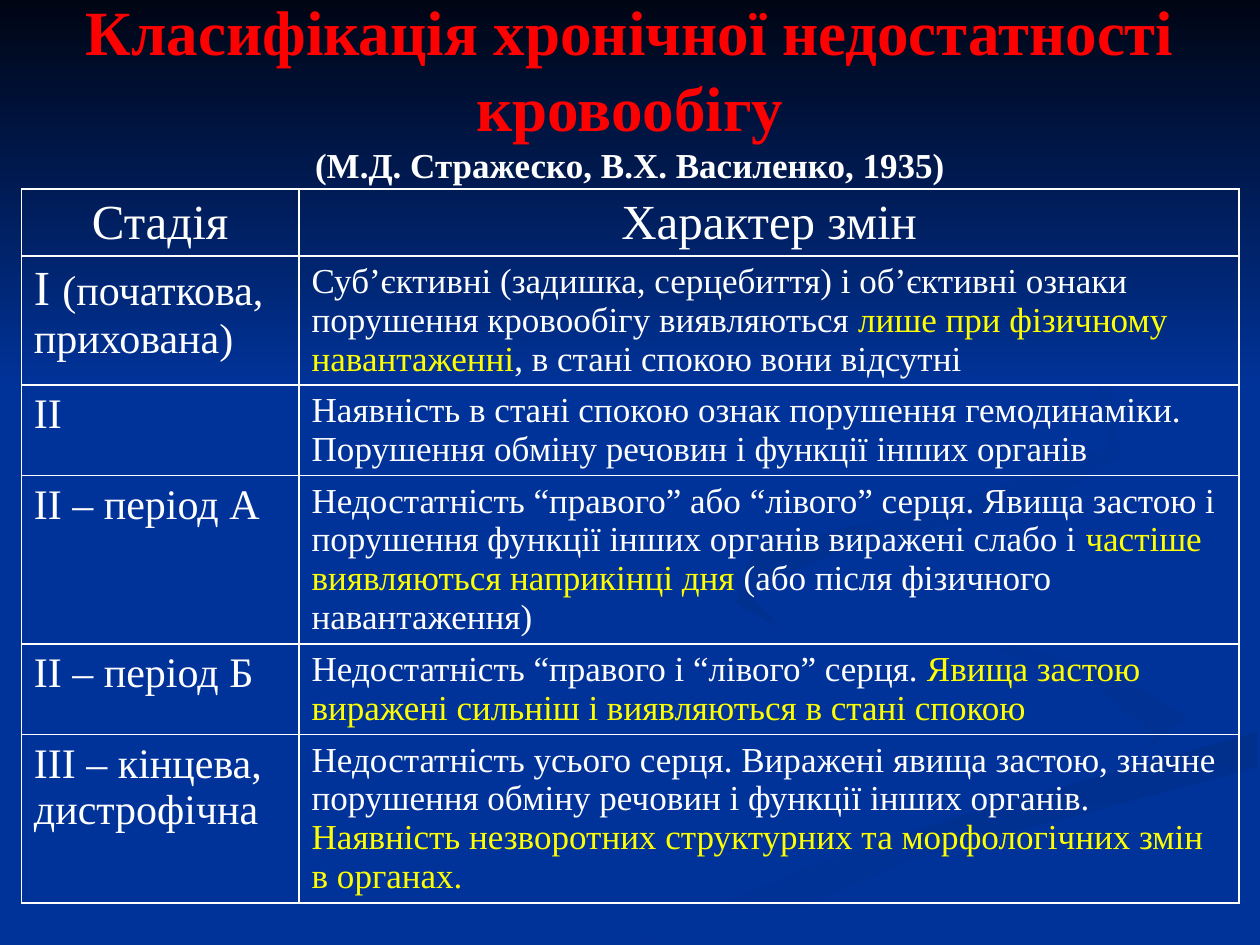
from lxml import etree
from pptx import Presentation
from pptx.dml.color import RGBColor
from pptx.enum.shapes import MSO_SHAPE
from pptx.enum.text import MSO_ANCHOR, MSO_AUTO_SIZE, PP_ALIGN
from pptx.oxml.ns import qn
from pptx.util import Cm, Pt

RECTANGLE = MSO_SHAPE.RECTANGLE
CENTER, LEFT = PP_ALIGN.CENTER, PP_ALIGN.LEFT
MIDDLE = MSO_ANCHOR.MIDDLE
NO_AUTOFIT = MSO_AUTO_SIZE.NONE
FONT = "Times New Roman"
TITLE_ONLY = 5
COLORS = {
    "blue": "003399", "night": "000514", "white": "FFFFFF", "red": "FF0000",
    "yellow": "FFFF00", "faint": "003193", "shade": "002F8C",
}

SWIRLS = [
    ("blue", "faint", 315, [
        (943, 570), (888, 535), (774, 503), (724, 464), (746, 500),
        (868, 544), (917, 585), (894, 605)]),
    ("shade", "blue", 270, [
        (503, 749), (571, 749), (722, 682), (998, 609), (998, 581),
        (764, 647), (630, 693)]),
    ("shade", "blue", 315, [
        (683, 430), (825, 402), (889, 362), (880, 307), (762, 233),
        (870, 299), (882, 354), (763, 398), (597, 437), (584, 479),
        (622, 500), (593, 470)]),
]

TITLE = [
    ("Класифікація хронічної недостатності кровообігу", 36, "red"),
    ("(М.Д. Стражеско, В.Х. Василенко, 1935)", 20, "white"),
]
HEADER_SIZE, STAGE_SIZE, CHANGE_SIZE = 28, 24, 20
HEADER = ("Стадія", "Характер змін")
STAGES = [
    ("(початкова, прихована)",
     [("Суб’єктивні (задишка, серцебиття) і об’єктивні ознаки порушення кровообігу виявляються ", "white"),
      ("лише при фізичному навантаженні", "yellow"),
      (", в стані спокою вони відсутні", "white")]),
    ("ІІ",
     [("Наявність в стані спокою ознак порушення гемодинаміки. "
       "Порушення обміну речовин і функції інших органів", "white")]),
    ("ІІ – період А",
     [("Недостатність “правого” або “лівого” серця. Явища застою і "
       "порушення функції інших органів виражені слабо і ", "white"),
      ("частіше виявляються наприкінці дня", "yellow"),
      (" (або після фізичного навантаження)", "white")]),
    ("ІІ – період Б",
     [("Недостатність “правого і “лівого” серця. ", "white"),
      ("Явища застою виражені сильніш і виявляються в стані спокою", "yellow")]),
    ("ІІІ – кінцева, дистрофічна",
     [("Недостатність усього серця. Виражені явища застою, значне "
       "порушення обміну речовин і функції інших органів. ", "white"),
      ("Наявність незворотних структурних та морфологічних змін в органах.", "yellow")]),
]
ROW_HEIGHTS = [1.35, 2.6, 1.8, 3.4, 1.8, 3.4]
STAGE_WIDTH = 5.6


def rgb(name):
    return RGBColor.from_string(COLORS[name])


def add_span(para, text, size, color, bold=False):
    span = para.add_run()
    span.text = text
    for name, value in {"name": FONT, "size": Pt(size), "bold": bold}.items():
        setattr(span.font, name, value)
    span.font.color.rgb = rgb(color)


def paint_gradient(shape, start, end, angle):
    shape.shadow.inherit = False
    shape.line.fill.background()
    shape.fill.gradient()
    shape.fill.gradient_angle = angle
    for stop, color, position in zip(shape.fill.gradient_stops, (start, end), (0, 1)):
        stop.color.rgb = rgb(color)
        stop.position = position


def add_backdrop(page, left, top, width, height):
    page.background.fill.solid()
    page.background.fill.fore_color.rgb = rgb("blue")
    for start, end, angle, points in SWIRLS:
        builder = page.shapes.build_freeform(*points[0], scale=Cm(width) / 1000)
        builder.add_line_segments(points[1:], close=True)
        swirl = builder.convert_to_shape(Cm(left), Cm(top))
        paint_gradient(swirl, start, end, angle)
    sky = page.shapes.add_shape(RECTANGLE, Cm(left), Cm(top), Cm(width), Cm(height * 0.41))
    paint_gradient(sky, "night", "blue", 270)


def place_title(page, left, top, width, height):
    title = page.shapes.title
    page.shapes._spTree.append(title._element)
    box = {"left": left, "top": top, "width": width, "height": height}
    for name, value in box.items():
        setattr(title, name, Cm(value))
    frame = title.text_frame
    layout = {"word_wrap": True, "auto_size": NO_AUTOFIT, "vertical_anchor": MIDDLE}
    for name, value in layout.items():
        setattr(frame, name, value)
    para = frame.paragraphs[0]
    para.alignment = CENTER
    heading, authors = TITLE
    add_span(para, *heading, bold=True)
    para.add_line_break()
    etree.SubElement(para._p[-1], qn("a:rPr"), sz=str(heading[1] * 100))
    add_span(para, *authors, bold=True)


def add_borders(cell):
    properties = cell._tc.get_or_add_tcPr()
    for index, side in enumerate(("a:lnL", "a:lnR", "a:lnT", "a:lnB")):
        line = etree.Element(qn(side), w=str(Pt(1)))
        fill = etree.SubElement(line, qn("a:solidFill"))
        etree.SubElement(fill, qn("a:srgbClr"), val=COLORS["white"])
        properties.insert(index, line)


def fill_cell(cell, spans, size, alignment=LEFT):
    cell.fill.background()
    add_borders(cell)
    para = cell.text_frame.paragraphs[0]
    para.alignment = alignment
    for text, color in spans:
        add_span(para, text, size, color)
    return para


def add_stage_table(page, left, top, width):
    table = page.shapes.add_table(
        len(ROW_HEIGHTS), 2, Cm(left), Cm(top), Cm(width), Cm(sum(ROW_HEIGHTS))).table
    table.first_row = table.horz_banding = False
    for column, size in zip(table.columns, (STAGE_WIDTH, width - STAGE_WIDTH)):
        column.width = Cm(size)
    for row, height in zip(table.rows, ROW_HEIGHTS):
        row.height = Cm(height)
    for column, label in enumerate(HEADER):
        fill_cell(table.cell(0, column), [(label, "white")], HEADER_SIZE, CENTER)
    for index, (stage, changes) in enumerate(STAGES, start=1):
        if index == 1:
            para = fill_cell(table.cell(index, 0), [("І ", "white")], HEADER_SIZE)
            add_span(para, stage, STAGE_SIZE, "white")
        else:
            fill_cell(table.cell(index, 0), [(stage, "white")], STAGE_SIZE)
        fill_cell(table.cell(index, 1), changes, CHANGE_SIZE)


def main():
    deck = Presentation()
    deck.slide_width, deck.slide_height = Cm(25.4), Cm(19.05)
    page = deck.slides.add_slide(deck.slide_layouts[TITLE_ONLY])
    add_backdrop(page, 0, 0, 25.4, 19.05)
    place_title(page, 1.27, 0.43, 22.86, 2.74)
    add_stage_table(page, 0.43, 3.81, 24.55)
    deck.save("out.pptx")


if __name__ == "__main__":
    main()
